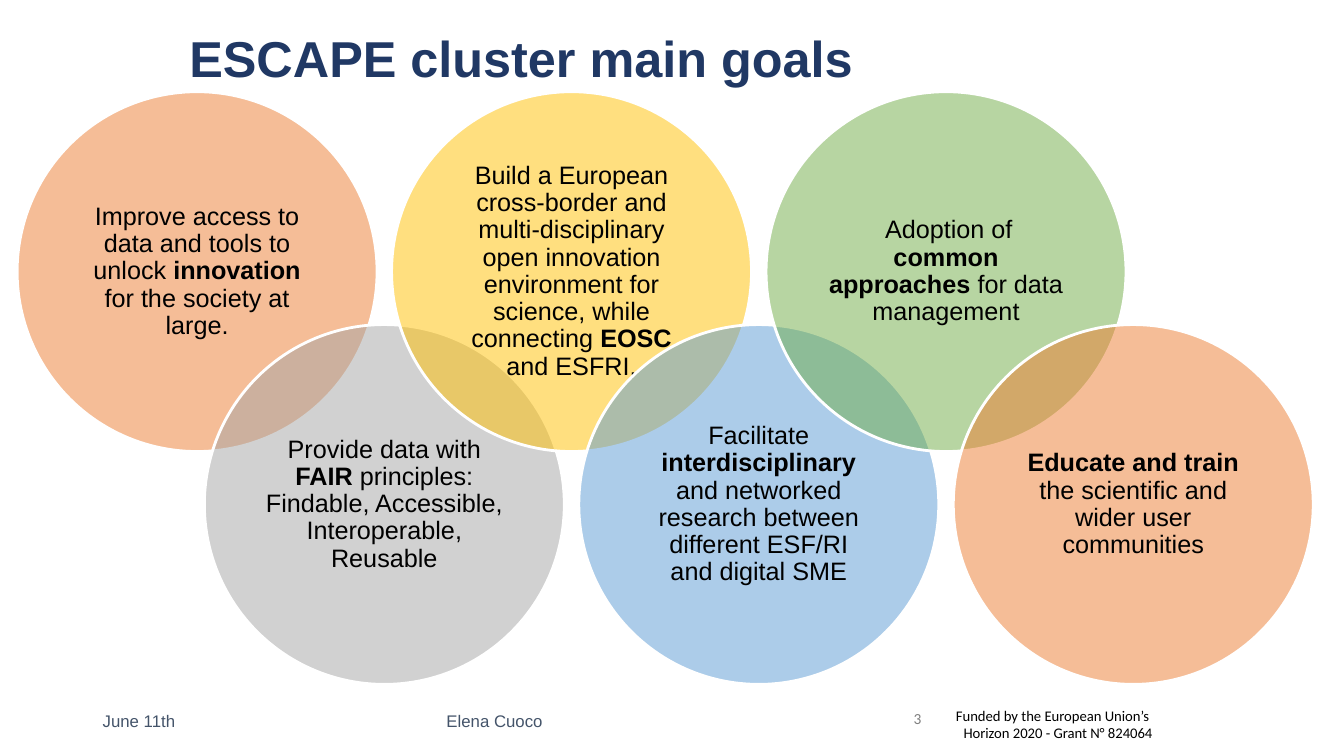
import pptx
import pptx.util
import pptx.dml.color
import pptx.enum.shapes
import pptx.enum.text
import pptx.oxml
import pptx.oxml.ns

Inches, Pt = pptx.util.Inches, pptx.util.Pt
ALIGN = pptx.enum.text.PP_ALIGN
MIDDLE, TOP = pptx.enum.text.MSO_ANCHOR.MIDDLE, pptx.enum.text.MSO_ANCHOR.TOP

# Goals from left to right; each run is (text, bold)
GOALS = [
    ("ED7D31", [("Improve access to data and tools to unlock ", False),
                ("innovation", True),
                (" for the society at large.", False)]),
    ("A5A5A5", [("Provide data with ", False),
                ("FAIR ", True),
                ("principles: Findable, Accessible, Interoperable, Reusable", False)]),
    ("FFC000", [("Build a European cross-border and multi-disciplinary open "
                 "innovation environment for science, while connecting ", False),
                ("EOSC", True),
                (" and ESFRI.", False)]),
    ("5B9BD5", [("Facilitate ", False),
                ("interdisciplinary", True),
                (" and networked research between different ESF/RI\vand digital SME", False)]),
    ("70AD47", [(" Adoption of ", False),
                ("common approaches ", True),
                ("for data management", False)]),
    ("ED7D31", [("Educate and train ", True),
                ("the scientific and wider user communities", False)]),
]

# (left, top, width, height), lines, size, font, colour, bold, alignment, anchor
LABELS = [
    ((7.47, 6.96, 4.06, 0.45),
     ["Funded by the European Union’s ", "Horizon 2020 - Grant N° 824064"],
     10.5, "Calibri", "000000", False, ALIGN.RIGHT, TOP),
    ((8.7, 6.99, 0.8, 0.4), ["3"],
     11, "Calibri", "7F7F7F", False, ALIGN.CENTER, TOP),
    ((1.78, 0, 10.63, 1.13), ["ESCAPE cluster main goals"],
     36, "Arial", "203864", True, ALIGN.LEFT, MIDDLE),
    ((0.92, 6.95, 1.71, 0.4), ["June 11th"],
     12, "Arial", "44546A", False, ALIGN.LEFT, MIDDLE),
    ((2.86, 6.95, 4.09, 0.4), ["Elena Cuoco"],
     12, "Arial", "44546A", False, ALIGN.CENTER, MIDDLE),
]

DIAMETER = 3.57
FIRST_LEFT, STEP = 0.17, 1.857
ROW_TOPS = (0.91, 3.22)


def rgb(colour):
    return pptx.dml.color.RGBColor.from_string(colour)


def set_frame(frame, anchor, inset_x, inset_y):
    frame.word_wrap = True
    frame.vertical_anchor = anchor
    frame.margin_left = frame.margin_right = Inches(inset_x)
    frame.margin_top = frame.margin_bottom = Inches(inset_y)


def write(paragraph, runs, size, font, colour, align):
    paragraph.alignment = align
    for text, bold in runs:
        for index, piece in enumerate(text.split("\v")):
            if index:
                paragraph.add_line_break()
            run = paragraph.add_run()
            run.text = piece
            run.font.size, run.font.name, run.font.bold = Pt(size), font, bold
            run.font.color.rgb = rgb(colour)


def add_label(slide, box, lines, size, font, colour, bold, align, anchor):
    frame = slide.shapes.add_textbox(*map(Inches, box)).text_frame
    set_frame(frame, anchor, 0.1, 0.05)
    for index, line in enumerate(lines):
        paragraph = frame.add_paragraph() if index else frame.paragraphs[0]
        write(paragraph, [(line, bold)], size, font, colour, align)


def add_goal(slide, position, colour, runs):
    """Draw a half-transparent circle; even positions go in the upper row."""
    circle = slide.shapes.add_shape(
        pptx.enum.shapes.MSO_SHAPE.OVAL,
        Inches(FIRST_LEFT + position * STEP), Inches(ROW_TOPS[position % 2]),
        Inches(DIAMETER), Inches(DIAMETER))
    circle.shadow.inherit = False
    circle.fill.solid()
    circle.fill.fore_color.rgb = rgb(colour)
    tint = circle.fill._xPr.find(".//" + pptx.oxml.ns.qn("a:srgbClr"))
    tint.append(pptx.oxml.parse_xml(
        f'<a:alpha {pptx.oxml.ns.nsdecls("a")} val="50000"/>'))
    circle.line.color.rgb = rgb("FFFFFF")
    circle.line.width = Pt(2)
    set_frame(circle.text_frame, MIDDLE, 0.07, 0.07)
    paragraph = circle.text_frame.paragraphs[0]
    paragraph.line_spacing = 0.9
    write(paragraph, runs, 18, "Arial", "000000", ALIGN.CENTER)


def main():
    deck = pptx.Presentation()
    deck.slide_width, deck.slide_height = Inches(13.33), Inches(7.5)
    slide = deck.slides.add_slide(deck.slide_layouts[6])
    for label in LABELS:
        add_label(slide, *label)
    # The upper and lower rows overlap, so circles stack from left to right
    for position, (colour, runs) in enumerate(GOALS):
        add_goal(slide, position, colour, runs)
    deck.save("out.pptx")


if __name__ == "__main__":
    main()
